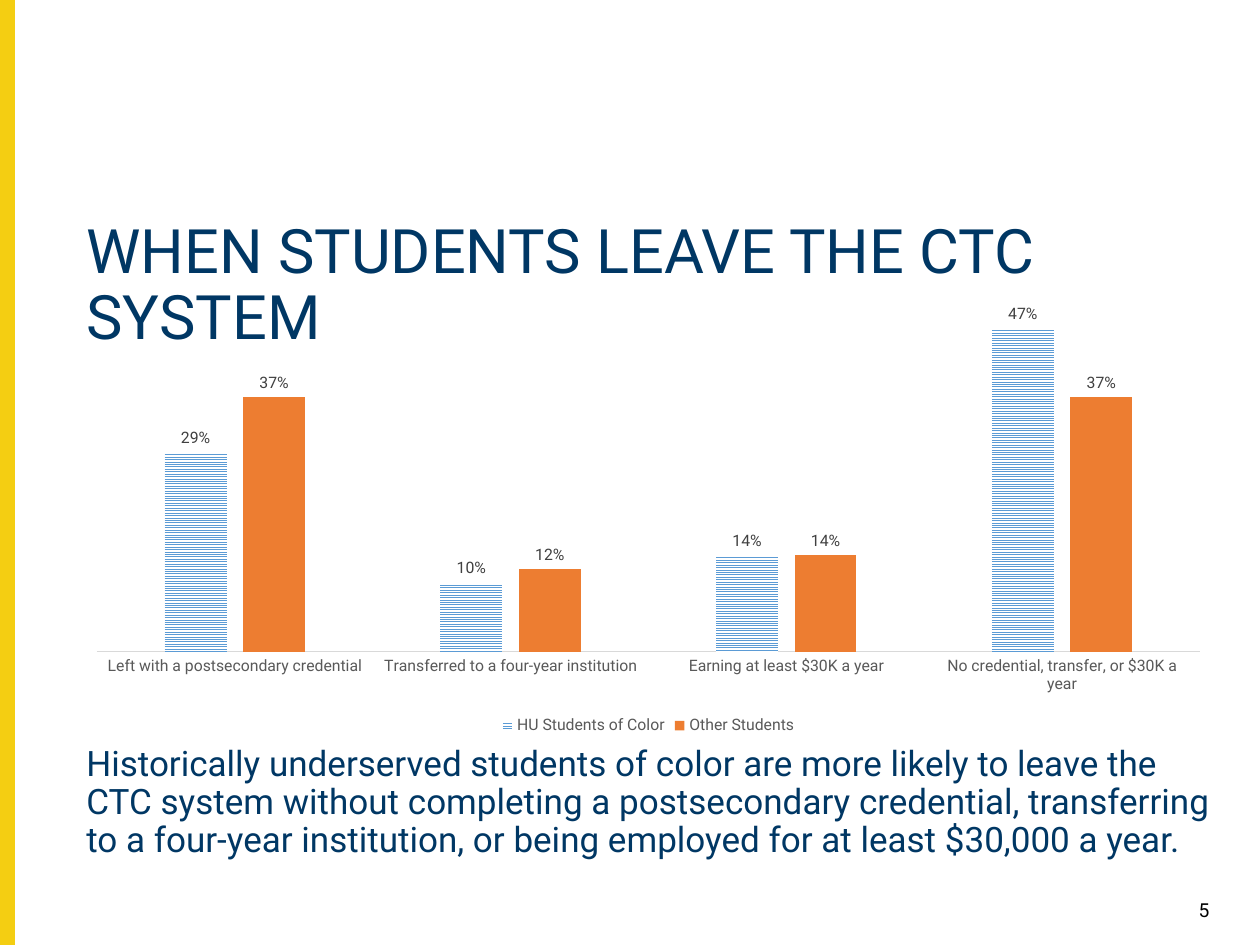
"""Build a slide charting outcomes of students who leave the CTC system."""

from dataclasses import dataclass
from typing import Any

import lxml.etree
import pptx
import pptx.chart.data
import pptx.dml.color
import pptx.enum.chart
import pptx.enum.dml
import pptx.enum.text
import pptx.enum.shapes
import pptx.oxml
import pptx.oxml.ns
import pptx.util

EMU_PER_PX = 914400 / 126


@dataclass(frozen=True)
class Theme:
    """Colours, font and type sizes of the slide."""

    font: str = "Roboto"
    navy: str = "003764"
    yellow: str = "F4CE12"
    black: str = "000000"
    white: str = "FFFFFF"
    blue: str = "5B9BD5"
    orange: str = "ED7D31"
    axis_line: str = "D9D9D9"
    axis_text: str = "595959"
    label_text: str = "404040"
    title_size: int = 35
    body_size: int = 20
    number_size: int = 11
    chart_size: int = 9


THEME = Theme()


@dataclass(frozen=True)
class Box:
    """A rectangle in whole px."""

    left: int
    top: int
    width: int
    height: int

    def emu(self) -> tuple[int, ...]:
        """Return the four lengths in EMU."""
        return tuple(px(value) for value in (self.left, self.top, self.width, self.height))


@dataclass(frozen=True)
class BarSeries:
    """One set of bars."""

    name: str
    values: tuple[float, ...]
    color: str
    striped: bool = False


CATEGORIES = (
    "Left with a postsecondary credential",
    "Transferred to a four-year institution",
    "Earning at least $30K a year",
    "No credential, transfer, or $30K a year",
)
SERIES = (
    BarSeries("HU Students of Color", (0.29, 0.1, 0.14, 0.47), THEME.blue, striped=True),
    BarSeries("Other Students", (0.37, 0.12, 0.14, 0.37), THEME.orange),
)
TAKEAWAY = (
    "Historically underserved students of color are more likely to leave the CTC system "
    "without completing a postsecondary credential, transferring to a four-year institution, "
    "or being employed for at least $30,000 a year."
)


def px(value: int) -> int:
    """Turn px into EMU."""
    return round(value * EMU_PER_PX)


def rgb(color: str) -> pptx.dml.color.RGBColor:
    """Turn a hex string into a colour."""
    return pptx.dml.color.RGBColor.from_string(color)


def assign(target: Any, values: dict[str, Any]) -> None:
    """Set every listed attribute on the target."""
    for name, value in values.items():
        setattr(target, name, value)


def style_font(font: Any, size: int, color: str) -> None:
    """Apply the theme font with a size and a colour."""
    assign(font, {"name": THEME.font, "size": pptx.util.Pt(size), "bold": False})
    font.color.rgb = rgb(color)


def write_text(
    shape: Any,
    text: str,
    size: int,
    color: str,
    anchor: Any = pptx.enum.text.MSO_ANCHOR.TOP,
    paragraph_format: dict[str, Any] | None = None,
) -> None:
    """Fill a shape with one styled paragraph."""
    frame = shape.text_frame
    assign(frame, {
        "text": text,
        "word_wrap": True,
        "auto_size": pptx.enum.text.MSO_AUTO_SIZE.NONE,
        "vertical_anchor": anchor,
    })
    paragraph = frame.paragraphs[0]
    assign(paragraph, {"alignment": pptx.enum.text.PP_ALIGN.LEFT, **(paragraph_format or {})})
    style_font(paragraph.runs[0].font, size, color)


def add_side_bar(slide: Any, box: Box) -> None:
    """Draw the coloured band on the left edge."""
    shape = slide.shapes.add_shape(pptx.enum.shapes.MSO_SHAPE.RECTANGLE, *box.emu())
    shape.shadow.inherit = False
    shape.fill.solid()
    shape.fill.fore_color.rgb = shape.line.color.rgb = rgb(THEME.yellow)
    shape.line.width = pptx.util.Pt(1)


def style_series(plot_series: Any, series: BarSeries) -> None:
    """Fill and label one set of bars."""
    plot_series.invert_if_negative = False
    fill = plot_series.format.fill
    if series.striped:
        fill.patterned()
        fill.pattern = pptx.enum.dml.MSO_PATTERN.NARROW_HORIZONTAL
        fill.back_color.rgb = rgb(THEME.white)
    else:
        fill.solid()
    fill.fore_color.rgb = rgb(series.color)
    labels = plot_series.data_labels
    assign(labels, {
        "show_value": True,
        "position": pptx.enum.chart.XL_LABEL_POSITION.OUTSIDE_END,
        "number_format": "0%",
        "number_format_is_linked": False,
    })
    style_font(labels.font, THEME.chart_size, THEME.label_text)


def set_plot_layout(chart: Any, fractions: dict[str, float]) -> None:
    """Place the inner plot area by fractions of the chart."""
    plot_area = chart.plots[0]._element.getparent()
    for layout in plot_area.findall(pptx.oxml.ns.qn("c:layout")):
        plot_area.remove(layout)
    layout = lxml.etree.Element(pptx.oxml.ns.qn("c:layout"))
    manual = lxml.etree.SubElement(layout, pptx.oxml.ns.qn("c:manualLayout"))
    settings = {"layoutTarget": "inner", "xMode": "edge", "yMode": "edge", **fractions}
    for name, value in settings.items():
        lxml.etree.SubElement(manual, pptx.oxml.ns.qn(f"c:{name}")).set("val", str(value))
    plot_area.insert(0, layout)


def add_outcome_chart(slide: Any, box: Box) -> None:
    """Draw the clustered columns of student outcomes."""
    data = pptx.chart.data.CategoryChartData(number_format="0%")
    data.categories = CATEGORIES
    for series in SERIES:
        data.add_series(series.name, series.values)
    kind = pptx.enum.chart.XL_CHART_TYPE.COLUMN_CLUSTERED
    chart = slide.shapes.add_chart(kind, *box.emu(), data).chart
    assign(chart, {"has_title": False, "has_legend": True})
    style_font(chart.font, THEME.chart_size, THEME.axis_text)
    assign(chart.legend, {
        "position": pptx.enum.chart.XL_LEGEND_POSITION.BOTTOM,
        "include_in_layout": False,
    })
    style_font(chart.legend.font, THEME.chart_size, THEME.axis_text)
    assign(chart.plots[0], {"gap_width": 219, "overlap": -27, "vary_by_categories": False})
    for plot_series, series in zip(chart.plots[0].series, SERIES):
        style_series(plot_series, series)
    assign(chart.value_axis, {
        "visible": False, "has_major_gridlines": False, "minimum_scale": 0, "maximum_scale": 0.5,
    })
    axis = chart.category_axis
    axis.major_tick_mark = pptx.enum.chart.XL_TICK_MARK.NONE
    style_font(axis.tick_labels.font, THEME.chart_size, THEME.axis_text)
    axis.format.line.color.rgb = rgb(THEME.axis_line)
    axis.format.line.width = pptx.util.Pt(0.75)
    set_plot_layout(chart, {"x": 0.02, "y": 0.02, "w": 0.96, "h": 0.78})


def main() -> None:
    """Build and save the slide."""
    presentation = pptx.Presentation()
    assign(presentation, {"slide_width": px(1260), "slide_height": px(945)})
    slide = presentation.slides.add_slide(presentation.slide_layouts[5])
    add_side_bar(slide, Box(0, 0, 14, 945))
    title = slide.shapes.title
    assign(title, dict(zip(("left", "top", "width", "height"), Box(74, 214, 1149, 110).emu())))
    tight = {"line_spacing": 0.9}
    write_text(title, "WHEN STUDENTS LEAVE THE CTC SYSTEM", THEME.title_size, THEME.navy,
               paragraph_format=tight)
    number = slide.shapes.add_textbox(*Box(1158, 893, 64, 33).emu())
    write_text(number, "5", THEME.number_size, THEME.black, pptx.enum.text.MSO_ANCHOR.MIDDLE,
               {"alignment": pptx.enum.text.PP_ALIGN.RIGHT})
    add_outcome_chart(slide, Box(74, 299, 1149, 441))
    takeaway = slide.shapes.add_textbox(*Box(74, 740, 1149, 132).emu())
    write_text(takeaway, TAKEAWAY, THEME.body_size, THEME.navy, paragraph_format=tight)
    presentation.save("out.pptx")


if __name__ == "__main__":
    main()
